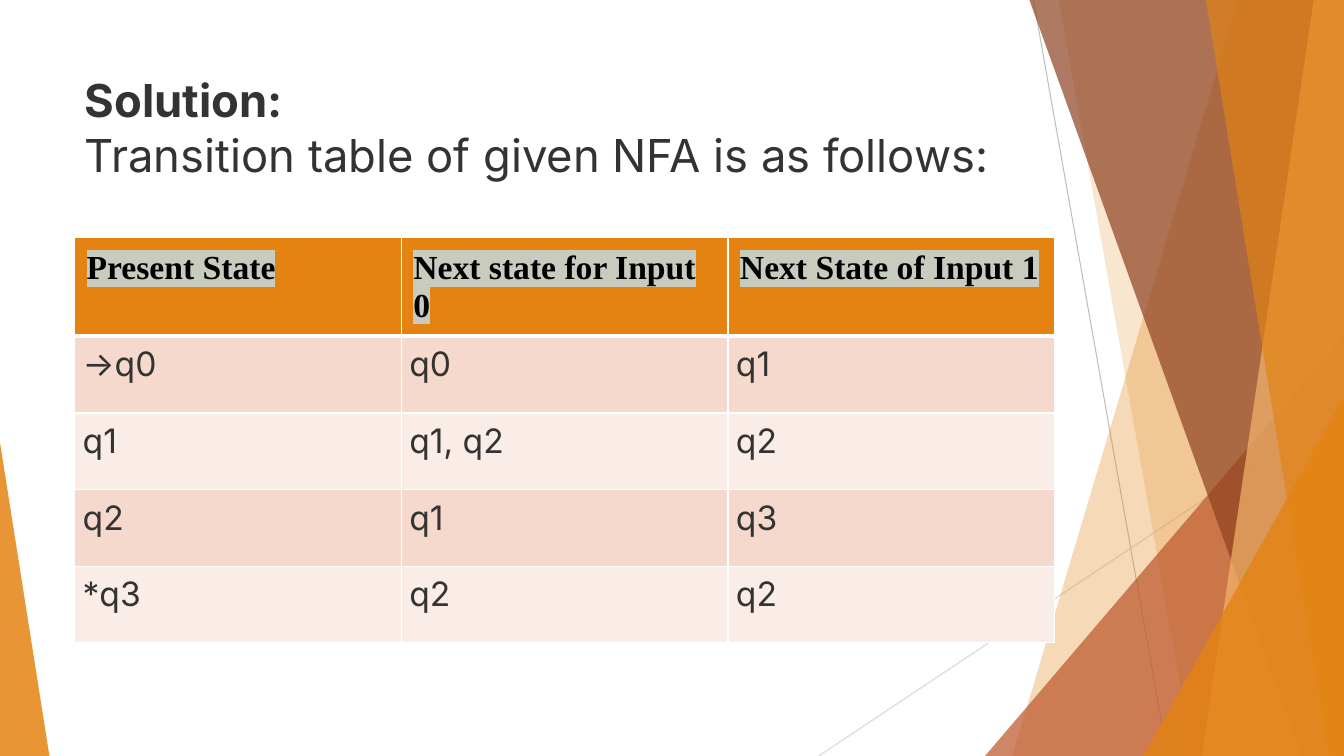
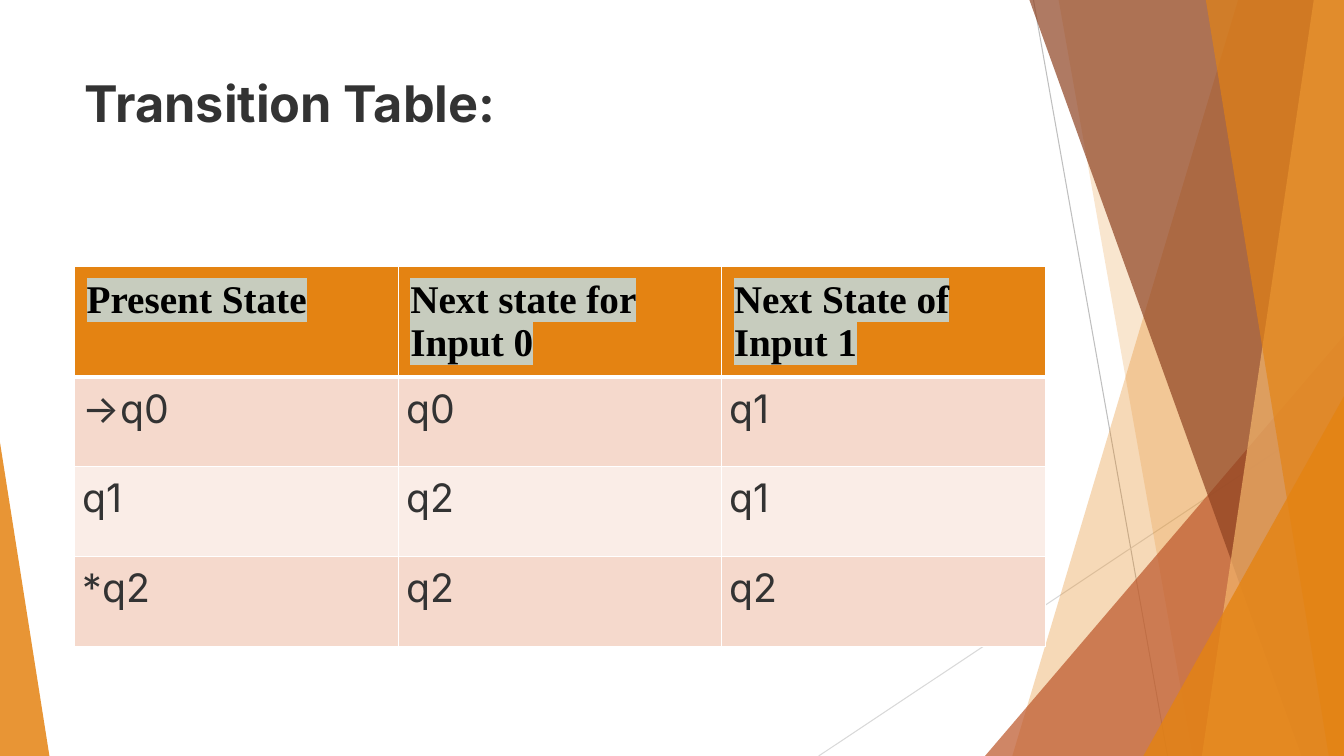
from lxml.etree import SubElement
from pptx import Presentation
from pptx.dml.color import RGBColor
from pptx.enum.shapes import MSO_CONNECTOR, MSO_SHAPE
from pptx.enum.text import MSO_ANCHOR, MSO_AUTO_SIZE, PP_ALIGN
from pptx.oxml.ns import qn
from pptx.util import Inches, Pt

WHITE = RGBColor(0xFF, 0xFF, 0xFF)
BLACK = RGBColor(0x00, 0x00, 0x00)
TEXT = RGBColor(0x33, 0x33, 0x33)
ORANGE = RGBColor(0xE4, 0x83, 0x12)
LIGHT_ORANGE = RGBColor(0xF3, 0xB5, 0x6C)
RUST = RGBColor(0xBD, 0x58, 0x2C)
BROWN = RGBColor(0x8E, 0x42, 0x21)
GRAY = RGBColor(0xBF, 0xBF, 0xBF)
LIGHT_GRAY = RGBColor(0xD9, 0xD9, 0xD9)
HIGHLIGHT = RGBColor(0xC7, 0xCC, 0xBE)
ROW_FILLS = [RGBColor(0xF5, 0xD9, 0xCC), RGBColor(0xFA, 0xED, 0xE7)]

W, H = 13.33, 7.5
LEFT = 0.74
HEADER = ["Present State", "Next state for Input 0", "Next State of Input 1"]

# Bands running from the top edge to the bottom: left x at top, at bottom
LINES = [((10.25, 0), (11.58, H), GRAY), ((W, 4.03), (8.12, H), LIGHT_GRAY)]
SHARDS = [
    ("band", (12.28, 10.04), ORANGE, 30),
    ("band", (10.5, 11.83), ORANGE, 20),
    ("triangle", (9.77, 3.33, 3.56, 1), RUST, 72),
    ("band", (10.21, 12.91), BROWN, 70),
    ("band", (13.03, 11.92), LIGHT_ORANGE, 70),
    ("band", (11.96, 13.18), ORANGE, 65),
    ("triangle", (11.34, 3.93, 1.99, 1), ORANGE, 80),
    ("triangle", (0, 4.39, 0.49, 0), ORANGE, 85),
]

SLIDES = [
    dict(title=["Solution:", "Transition table of given NFA is as follows:"],
         title_size=32.4, top=2.36, col=3.24, header_row=0.9, row=0.76, size=24,
         rows=[["→q0", "q0", "q1"], ["q1", "q1, q2", "q2"],
               ["q2", "q1", "q3"], ["*q3", "q2", "q2"]]),
    dict(title=["Transition Table:"],
         title_size=36, top=2.64, col=3.21, header_row=1.05, row=0.89, size=28,
         rows=[["→q0", "q0", "q1"], ["q1", "q2", "q1"], ["*q2", "q2", "q2"]]),
]


def add_color(parent, color):
    """Append a solid colour to an XML element and return its srgbClr."""
    return SubElement(parent, qn("a:srgbClr"), val=str(color))


def set_borders(cell, top, bottom):
    """White cell borders: 1 pt at the sides, given widths above and below."""
    tcPr = cell._tc.get_or_add_tcPr()
    for side, width in (("L", 1), ("R", 1), ("T", top), ("B", bottom)):
        ln = SubElement(tcPr, qn("a:ln" + side), w=str(Pt(width)))
        add_color(SubElement(ln, qn("a:solidFill")), WHITE)


prs = Presentation()
prs.slide_width, prs.slide_height = Inches(W), Inches(H)

# Layout: title position, then the decoration shared by all slides
layout = prs.slide_layouts[5]
for ph in list(layout.placeholders)[1:]:
    ph.element.getparent().remove(ph.element)
title = layout.placeholders[0]
title.left, title.top = Inches(LEFT), Inches(0.67)
title.width, title.height = Inches(9.4), Inches(1.44)

slides = [prs.slides.add_slide(layout) for _ in SLIDES]
shapes = slides[0].shapes

for start, end, color in LINES:
    line = shapes.add_connector(MSO_CONNECTOR.STRAIGHT,
                                *[Inches(v) for v in start + end])
    line.line.color.rgb = color
    line.line.width = Pt(0.75)
    SubElement(line.element.spPr, qn("a:effectLst"))

for kind, geometry, color, opacity in SHARDS:
    if kind == "band":
        x_top, x_bottom = geometry
        builder = shapes.build_freeform(Inches(x_top), 0)
        builder.add_line_segments([(Inches(x), Inches(y)) for x, y in
                                   ((W, 0), (W, H), (x_bottom, H))])
        sp = builder.convert_to_shape()
    else:
        x, y, width, apex = geometry
        sp = shapes.add_shape(MSO_SHAPE.ISOSCELES_TRIANGLE, Inches(x), Inches(y),
                              Inches(width), Inches(H - y))
        sp.adjustments[0] = apex
    sp.shadow.inherit = False
    sp.line.fill.background()
    sp.fill.solid()
    sp.fill.fore_color.rgb = color
    srgb = sp.element.spPr.find(qn("a:solidFill")).find(qn("a:srgbClr"))
    SubElement(srgb, qn("a:alpha"), val=str(opacity * 1000))

# The decoration moves from the first slide to the layout
for sp in list(shapes):
    if not sp.is_placeholder:
        layout.shapes.element.append(sp.element)

for s, content in zip(slides, SLIDES):
    tf = s.shapes.title.text_frame
    tf.word_wrap = True
    tf.auto_size = MSO_AUTO_SIZE.NONE
    tf.vertical_anchor = MSO_ANCHOR.TOP
    p = tf.paragraphs[0]
    p.alignment = PP_ALIGN.LEFT
    for i, text in enumerate(content["title"]):
        if i:
            p.add_line_break()
        r = p.add_run()
        r.text = text
        r.font.name = "Inter"
        r.font.size = Pt(content["title_size"])
        r.font.bold = i == 0
        r.font.color.rgb = TEXT

    rows = [HEADER] + content["rows"]
    heights = [content["header_row"]] + [content["row"]] * len(content["rows"])
    table = s.shapes.add_table(
        len(rows), len(HEADER), Inches(LEFT), Inches(content["top"]),
        Inches(content["col"] * len(HEADER)), Inches(sum(heights))).table
    for column in table.columns:
        column.width = Inches(content["col"])

    for i, (values, height) in enumerate(zip(rows, heights)):
        table.rows[i].height = Inches(height)
        is_header = i == 0
        for j, value in enumerate(values):
            cell = table.cell(i, j)
            inset = Inches(0.12 if is_header else 0.08)
            cell.margin_left = cell.margin_right = inset
            cell.margin_top = cell.margin_bottom = inset
            set_borders(cell, 3 if i == 1 else 1, 3 if is_header else 1)
            cell.fill.solid()
            cell.fill.fore_color.rgb = ORANGE if is_header else ROW_FILLS[(i - 1) % 2]
            p = cell.text_frame.paragraphs[0]
            p.alignment = PP_ALIGN.LEFT if is_header else PP_ALIGN.JUSTIFY
            r = p.add_run()
            r.text = value
            r.font.size = Pt(content["size"])
            r.font.bold = is_header
            r.font.color.rgb = BLACK if is_header else TEXT
            if is_header:
                add_color(SubElement(r.font._element, qn("a:highlight")), HIGHLIGHT)
            r.font.name = "Times New Roman" if is_header else "Inter"

prs.save("out.pptx")
